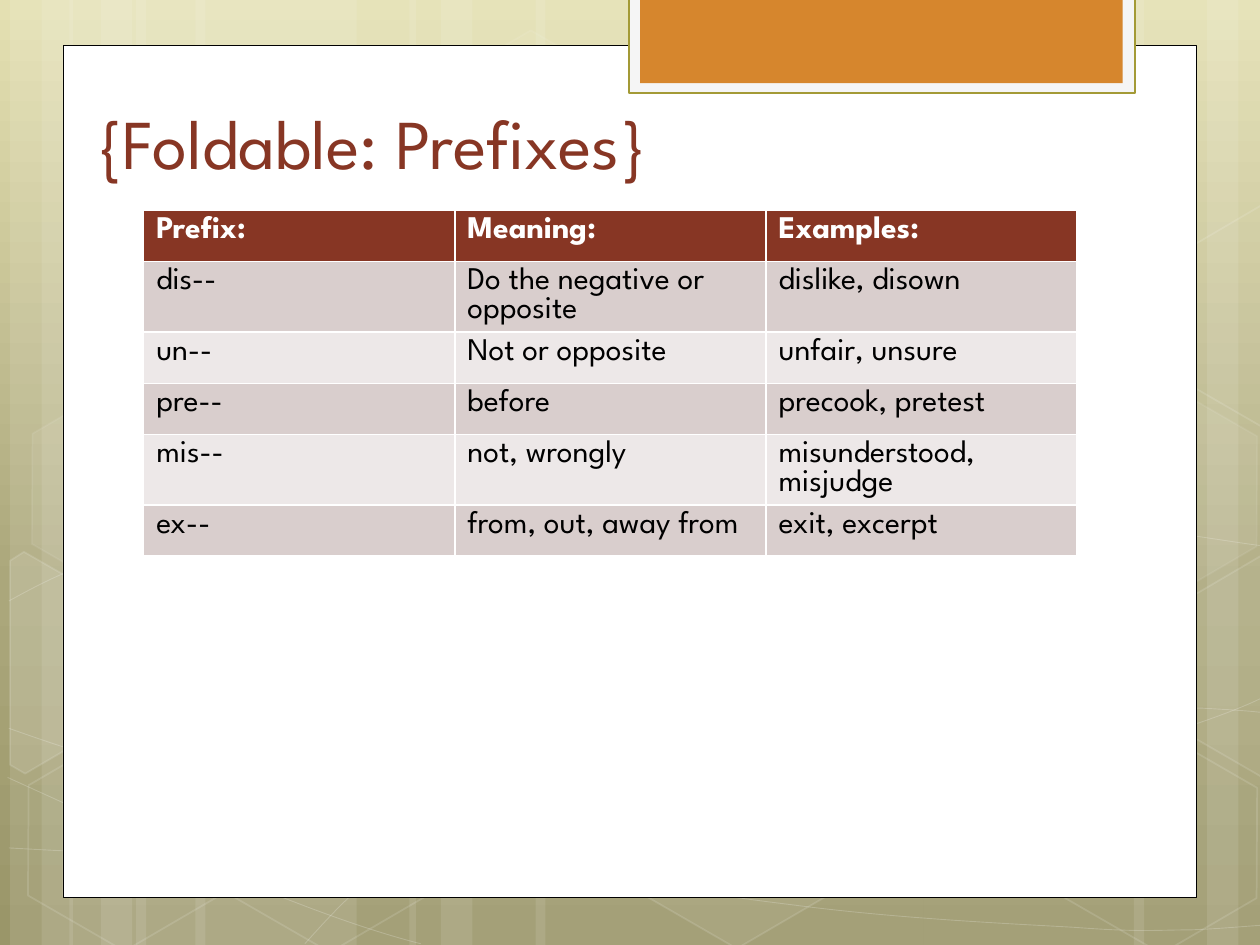
"""Build the prefixes foldable slide: a patterned backdrop, a white panel and a table."""
import copy
import math
from dataclasses import dataclass
from typing import NamedTuple, Optional

import lxml.etree
import pptx
import pptx.dml.color
import pptx.enum.shapes
import pptx.enum.text
import pptx.oxml.ns
import pptx.util

Inches, Pt, qn = pptx.util.Inches, pptx.util.Pt, pptx.oxml.ns.qn
PRESETS = pptx.enum.shapes.MSO_SHAPE


@dataclass(frozen=True)
class Theme:
    font: str = "League Spartan"
    title_size: float = 40
    table_size: float = 18
    white: str = "FFFFFF"
    black: str = "000000"
    brick: str = "873624"
    ribbon: str = "D6862D"
    ribbon_mat: str = "F5F5F5"
    ribbon_edge: str = "A39A36"
    row_bands: tuple = ("D9CECD", "EDE8E8")
    backdrop: tuple = ((0, "E4E0B2"), (0.62, "ABA77B"), (1, "9A9669"))


class Box(NamedTuple):
    left: float
    top: float
    width: float
    height: float


class Paint(NamedTuple):
    fill: Optional[str] = None
    fill_alpha: int = 100
    line: Optional[str] = None
    line_width: float = 1
    line_alpha: int = 100


class Hexagon(NamedTuple):
    left: float
    top: float
    fill_alpha: int = 0
    line_alpha: int = 12


class CutHexagon(NamedTuple):
    points: tuple
    fill_alpha: int = 0


THEME = Theme()
STRIPES = ((1.08, 1.75), (0.08, 0.5), (0.33, 0.83), (1.55, 1.75), (0.55, 0.5), (0.8, 0.83),
           (7.33, 1.75), (9.58, 0.5), (9, 0.83), (4.25, 3.08), (3.25, 0.5), (3.5, 0.83))
CURVES = (
    ((0.07, 6.73), (0.61, 6.76), (1.15, 6.79), (1.9, 6.78), (2.65, 6.77), (3.58, 6.75),
     (4.58, 6.65), (5.58, 6.55), (7, 6.36), (7.92, 6.17), (8.83, 5.98), (9.77, 5.68), (10.07, 5.51)),
    ((0.07, 4.77), (0.36, 4.61), (0.65, 4.46), (1.21, 4.31), (1.78, 4.16), (2.59, 3.94),
     (3.47, 3.87), (4.36, 3.8), (5.44, 3.79), (6.54, 3.87), (7.64, 3.95), (9.47, 4.26), (10.07, 4.34)),
    ((0.06, 6.17), (1.27, 6.72), (2.47, 7.27), (3.34, 7.49)),
    ((0.07, 5.78), (0.38, 5.89), (0.7, 6), (1.28, 6.16), (1.86, 6.31), (2.73, 6.56), (3.57, 6.73),
     (4.4, 6.9), (5.45, 7.08), (6.28, 7.18), (7.11, 7.29), (8, 7.33), (8.53, 7.36),
     (9.05, 7.4), (9.19, 7.38), (9.45, 7.38), (9.71, 7.37), (9.89, 7.35), (10.07, 7.34)),
    ((2.42, 7.49), (2.6, 7.29), (2.78, 7.09), (3.02, 6.91), (3.26, 6.73), (3.6, 6.53), (3.88, 6.39),
     (4.16, 6.25), (4.33, 6.19), (4.7, 6.09), (5.06, 5.99), (5.73, 5.85), (6.08, 5.78),
     (6.44, 5.71), (6.49, 5.71), (6.8, 5.69), (7.11, 5.66), (7.6, 5.63), (7.94, 5.62),
     (8.29, 5.61), (8.86, 5.62), (8.86, 5.62), (8.86, 5.62), (9.53, 5.62), (9.53, 5.62),
     (9.71, 5.63), (9.88, 5.64), (9.97, 5.65), (10.06, 5.66), (10.03, 5.65), (10.06, 5.66)),
)
HEXAGONS = (Hexagon(3.34, 0.36, 4, 8), Hexagon(4.97, 5.89, 6), Hexagon(0.11, 5.91),
            Hexagon(0.14, 3.12, 7, 8), Hexagon(1.74, 5.92), Hexagon(8.34, 5.93),
            Hexagon(8.34, 3.14, 7, 8))
CUT_HEXAGONS = (
    CutHexagon(((0.08, 4.45), (0.19, 4.38), (0.96, 4.82), (0.95, 5.7), (0.2, 6.14), (0.08, 6.07)), 10),
    CutHexagon(((9.26, 4.85), (10.01, 4.41), (10.09, 4.46), (10.09, 6.13), (10.02, 6.17), (9.26, 5.73)), 4),
    CutHexagon(((9.26, 2.07), (10.01, 1.63), (10.1, 1.68), (10.09, 3.35), (10.02, 3.39), (9.26, 2.95))),
)
PREFIXES = (
    ("Prefix:", "Meaning:", "Examples:"),
    ("dis--", "Do the negative or opposite", "dislike, disown"),
    ("un--", "Not or opposite", "unfair, unsure"),
    ("pre--", "before", "precook, pretest"),
    ("mis--", "not, wrongly", "misunderstood, misjudge"),
    ("ex--", "from, out, away from", "exit, excerpt"),
)


def paint_solid(fill, owner, color: str, alpha: int = 100) -> None:
    fill.solid()
    fill.fore_color.rgb = pptx.dml.color.RGBColor.from_string(color)
    if alpha < 100:
        tint = owner.find(qn("a:solidFill"))[0]
        lxml.etree.SubElement(tint, qn("a:alpha")).set("val", str(alpha * 1000))


def apply_paint(shape, paint: Paint) -> None:
    shape.shadow.inherit = False
    shape.fill.background()
    shape.line.fill.background()
    if paint.fill and paint.fill_alpha:
        paint_solid(shape.fill, shape.element.spPr, paint.fill, paint.fill_alpha)
    if paint.line:
        shape.line.width = Pt(paint.line_width)
        paint_solid(shape.line.fill, shape.element.spPr.find(qn("a:ln")), paint.line, paint.line_alpha)


def draw_preset(slide, preset, box: Box, paint: Paint):
    shape = slide.shapes.add_shape(preset, *map(Inches, box))
    apply_paint(shape, paint)
    return shape


def draw_outline(slide, points, closed: bool, paint: Paint):
    start, *rest = [(Inches(x), Inches(y)) for x, y in points]
    builder = slide.shapes.build_freeform(*start)
    builder.add_line_segments(rest, close=closed)
    shape = builder.convert_to_shape()
    apply_paint(shape, paint)
    return shape


def bend_segments(shape) -> None:
    lines = list(shape.element.iter(qn("a:lnTo")))
    for first in range(0, len(lines), 3):
        bend = lxml.etree.Element(qn("a:cubicBezTo"))
        lines[first].addprevious(bend)
        for line in lines[first:first + 3]:
            bend.append(line[0])
            line.getparent().remove(line)


def turn(points, degrees: float) -> list[tuple[float, float]]:
    cos, sin = math.cos(math.radians(degrees)), math.sin(math.radians(degrees))
    return [(x * cos - y * sin, x * sin + y * cos) for x, y in points]


def draw_cut_hexagon(slide, item: CutHexagon) -> None:
    level = turn(item.points, -30)
    middle = tuple((min(axis) + max(axis)) / 2 for axis in zip(*level))
    center = turn([middle], 30)[0]
    points = [(x - middle[0] + center[0], y - middle[1] + center[1]) for x, y in level]
    paint = Paint(THEME.white, item.fill_alpha, THEME.white, 1, 12)
    draw_outline(slide, points, True, paint).rotation = 30


def draw_backdrop(slide) -> None:
    fill = slide.background.fill
    fill.gradient()
    fill.gradient_angle = 270
    stops = next(slide.element.iter(qn("a:gsLst")))
    stops.append(copy.deepcopy(stops[-1]))
    for stop, (position, color) in zip(fill.gradient_stops, THEME.backdrop):
        stop.position = position
        stop.color.rgb = pptx.dml.color.RGBColor.from_string(color)
    for left, width in STRIPES:
        draw_preset(slide, PRESETS.RECTANGLE, Box(left, 0, width, 7.5), Paint(THEME.white, 10))
    for knots in CURVES:
        bend_segments(draw_outline(slide, knots, False, Paint(None, 100, THEME.white, 0.5, 20)))
    for item in HEXAGONS:
        hexagon = draw_preset(slide, PRESETS.HEXAGON, Box(item.left, item.top, 1.75, 1.52),
                              Paint(THEME.white, item.fill_alpha, THEME.white, 1, item.line_alpha))
        hexagon.rotation, hexagon.adjustments[0] = 30, 0.285
    for item in CUT_HEXAGONS:
        draw_cut_hexagon(slide, item)


def style_text(frame, size: float, color: str, bold: bool = False) -> None:
    frame.paragraphs[0].alignment = pptx.enum.text.PP_ALIGN.LEFT
    font = frame.paragraphs[0].runs[0].font
    font.name, font.size, font.bold = THEME.font, Pt(size), bold
    paint_solid(font.fill, None, color)


def write_title(slide, box: Box) -> None:
    title = slide.shapes.title
    title.left, title.top, title.width, title.height = map(Inches, box)
    title.text_frame.text = "{Foldable: Prefixes}"
    title.text_frame.vertical_anchor = pptx.enum.text.MSO_ANCHOR.BOTTOM
    style_text(title.text_frame, THEME.title_size, THEME.brick)
    slide.shapes.element.append(title.element)


def draw_table(slide) -> None:
    table = slide.shapes.add_table(len(PREFIXES), 3, Inches(1.14), Inches(1.67),
                                   Inches(7.41), Pt(29.2) * len(PREFIXES)).table
    for row, texts in enumerate(PREFIXES):
        for cell, text in zip(table.rows[row].cells, texts):
            cell.text_frame.text = text
            style_text(cell.text_frame, THEME.table_size, THEME.black if row else THEME.white, row == 0)
            paint_solid(cell.fill, None, THEME.row_bands[(row - 1) % 2] if row else THEME.brick)


def main() -> None:
    deck = pptx.Presentation()
    deck.slide_width, deck.slide_height = Inches(10), Inches(7.5)
    slide = deck.slides.add_slide(deck.slide_layouts[5])
    draw_backdrop(slide)
    for box, paint in ((Box(0.5, 0.36, 9, 6.76), Paint(THEME.white, 100, THEME.black, 0.5)),
                       (Box(4.99, -0.02, 4.02, 0.76), Paint(THEME.ribbon_mat, 100, THEME.ribbon_edge, 1.25)),
                       (Box(5.08, -0.02, 3.83, 0.68), Paint(THEME.ribbon))):
        draw_preset(slide, PRESETS.RECTANGLE, box, paint)
    write_title(slide, Box(0.68, 0.6, 5.49, 0.91))
    draw_table(slide)
    deck.save("out.pptx")


if __name__ == "__main__":
    main()
